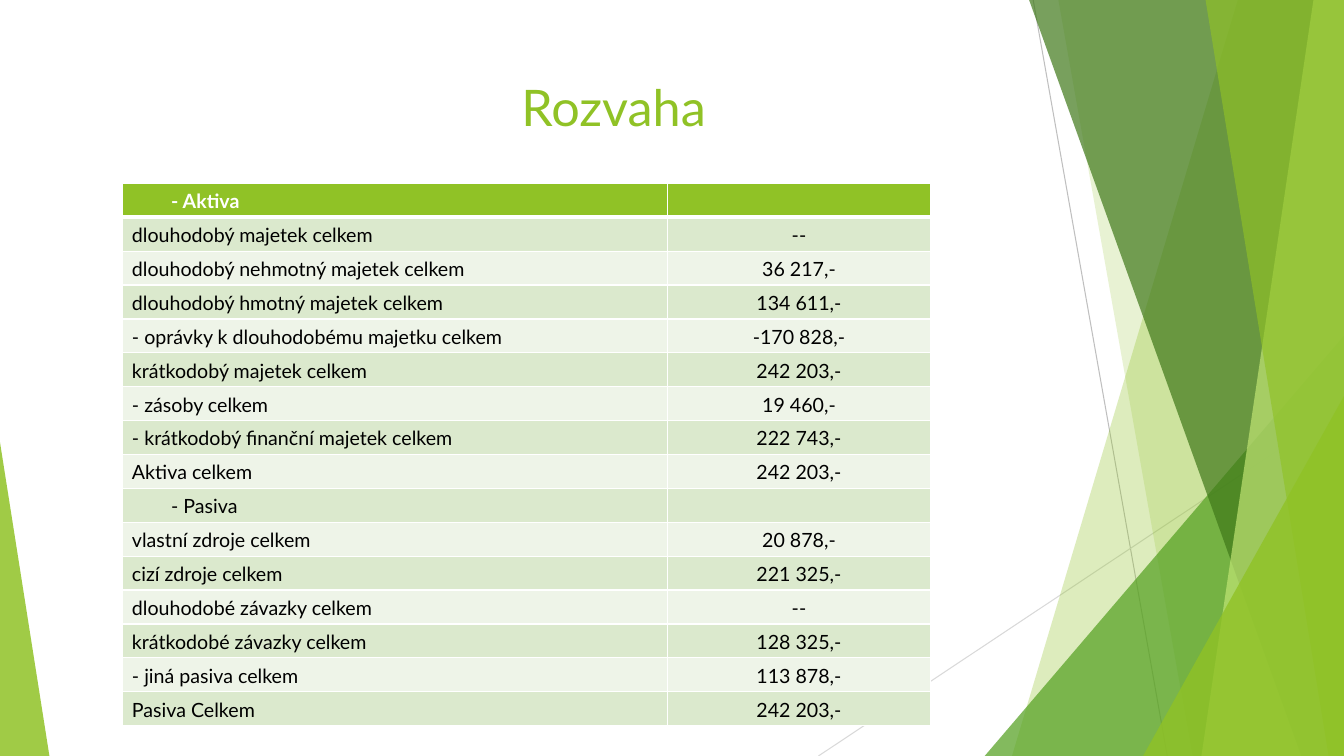
from lxml import etree
from pptx import Presentation
from pptx.dml.color import RGBColor
from pptx.enum.shapes import MSO_CONNECTOR, MSO_SHAPE
from pptx.enum.text import MSO_ANCHOR, MSO_AUTO_SIZE, PP_ALIGN
from pptx.oxml.ns import qn
from pptx.util import Pt

LINE = MSO_CONNECTOR.STRAIGHT
WEDGE = MSO_SHAPE.ISOSCELES_TRIANGLE
TOP, MIDDLE = MSO_ANCHOR.TOP, MSO_ANCHOR.MIDDLE
NO_FIT = MSO_AUTO_SIZE.NONE
LEFT, CENTER = PP_ALIGN.LEFT, PP_ALIGN.CENTER
FONT = "Lato"
LIME = "90C226"
WHITE = "FFFFFF"
BANDS = ("EEF4E8", "DBE9CD")
HEADS = ("- Aktiva", "- Pasiva")

ROWS = [
    ("- Aktiva", ""),
    ("dlouhodobý majetek celkem", "--"),
    ("dlouhodobý nehmotný majetek celkem", "36 217,-"),
    ("dlouhodobý hmotný majetek celkem", "134 611,-"),
    ("- oprávky k dlouhodobému majetku celkem", "-170 828,-"),
    ("krátkodobý majetek celkem", "242 203,-"),
    ("- zásoby celkem", "19 460,-"),
    ("- krátkodobý finanční majetek celkem", "222 743,-"),
    ("Aktiva celkem", "242 203,-"),
    ("- Pasiva", ""),
    ("vlastní zdroje celkem", "20 878,-"),
    ("cizí zdroje celkem", "221 325,-"),
    ("dlouhodobé závazky celkem", "--"),
    ("krátkodobé závazky celkem", "128 325,-"),
    ("- jiná pasiva celkem", "113 878,-"),
    ("Pasiva Celkem", "242 203,-"),
]


def tint(code):
    """Turn a hex string into a colour."""
    return RGBColor.from_string(code)


def paint(shape, code, alpha):
    """Fill a shape with a see-through colour and no outline."""
    shape.shadow.inherit = False
    shape.line.fill.background()
    shape.fill.solid()
    shape.fill.fore_color.rgb = tint(code)
    color = shape._element.spPr.find(qn("a:solidFill"))[0]
    etree.SubElement(color, qn("a:alpha"), val=str(alpha * 1000))


def wedge(slide, left, top, width, height, lean, code, alpha):
    """Draw a right-angled triangle whose peak leans to one side."""
    shape = slide.shapes.add_shape(WEDGE, Pt(left), Pt(top), Pt(width), Pt(height))
    shape.adjustments[0] = lean
    paint(shape, code, alpha)


def pane(slide, left, top, width, height, head, foot, code, alpha):
    """Draw a pane with a slanted left edge, flush with the box on the right."""
    right, base = left + width, top + height
    path = slide.shapes.build_freeform(Pt(left + head), Pt(top), scale=1.0)
    spots = [(right, top), (right, base), (left + foot, base)]
    path.add_line_segments([(Pt(x), Pt(y)) for x, y in spots], close=True)
    paint(path.convert_to_shape(), code, alpha)


def rule(slide, start, end, code):
    """Draw a thin line between two points."""
    line = slide.shapes.add_connector(LINE, *map(Pt, start + end))
    line.line.color.rgb = tint(code)
    line.line.width = Pt(0.75)
    etree.SubElement(line._element.spPr, qn("a:effectLst"))


def decor(slide, left, top, width, height):
    """Lay the green panes and thin lines along the right side."""
    box = (left, top, width, height)
    right, base = left + width, top + height

    def spike(wide, tall, code, alpha):
        """Place a triangle in the lower right corner."""
        wedge(slide, right - wide, base - tall, wide, tall, 1, code, alpha)

    rule(slide, (left + 158, top), (left + 253.8, base), "BFBFBF")
    rule(slide, (right, top + 290.2), (left + 4.6, base), "D9D9D9")
    pane(slide, *box, 304.2, 142.9, LIME, 30)
    pane(slide, *box, 176, 271.8, LIME, 20)
    spike(256.6, 300.2, "54A021", 72)
    pane(slide, *box, 155.1, 349.5, "3F7819", 70)
    pane(slide, *box, 358.2, 278.2, "C0E474", 70)
    pane(slide, *box, 281.1, 369, LIME, 65)
    spike(143.5, 257, LIME, 80)


def title(slide, left, top, width, height):
    """Set the slide title."""
    shape = slide.shapes.title
    shape.left, shape.top, shape.width, shape.height = map(Pt, (left, top, width, height))
    frame = shape.text_frame
    frame.text = "Rozvaha"
    frame.auto_size = NO_FIT
    frame.vertical_anchor = TOP
    para = frame.paragraphs[0]
    para.alignment = CENTER
    font = para.runs[0].font
    font.name, font.size, font.color.rgb = FONT, Pt(36), tint(LIME)


def border(cell, base):
    """Give a cell white borders, with its own width at the base."""
    props = cell._tc.get_or_add_tcPr()
    for side, wide in (("L", 1), ("R", 1), ("T", 1), ("B", base)):
        edge = etree.SubElement(props, qn("a:ln" + side), w=str(Pt(wide)))
        fill = etree.SubElement(edge, qn("a:solidFill"))
        etree.SubElement(fill, qn("a:srgbClr"), val=WHITE)


def write(cell, text, align, first):
    """Put text in a table cell and format it."""
    cell.margin_left = Pt(34.5 if text in HEADS else 6.5)
    cell.margin_right = Pt(6.5)
    cell.margin_top = cell.margin_bottom = Pt(2.9)
    cell.vertical_anchor = MIDDLE
    cell.text_frame.text = text
    para = cell.text_frame.paragraphs[0]
    para.alignment = align
    para.line_spacing = 1.07
    para.space_after = Pt(8)
    for run in para.runs:
        font = run.font
        font.name, font.size, font.bold = FONT, Pt(14), first
        font.color.rgb = tint(WHITE if first else "000000")
    etree.SubElement(para._p, qn("a:endParaRPr"), sz="1400")


def sheet(slide, left, top, width, height):
    """Build the balance table."""
    box = map(Pt, (left, top, width, height))
    table = slide.shapes.add_table(len(ROWS), 2, *box).table
    for col, share in zip(table.columns, (0.675, 0.325)):
        col.width = Pt(width * share)
    for i, row in enumerate(ROWS):
        table.rows[i].height = Pt(height / len(ROWS))
        first = i == 0
        for j, (text, align) in enumerate(zip(row, (LEFT, CENTER))):
            cell = table.cell(i, j)
            border(cell, 3 if first else 1)
            cell.fill.solid()
            cell.fill.fore_color.rgb = tint(LIME if first else BANDS[i % 2])
            write(cell, text, align, first)


def main():
    """Build and save the slide."""
    deck = Presentation()
    deck.slide_width, deck.slide_height = Pt(960), Pt(540)
    slide = deck.slides.add_slide(deck.slide_layouts[5])
    decor(slide, 580, 0, 380, 540)
    wedge(slide, 0, 316, 35.3, 224, 0, LIME, 85)
    title(slide, 92, 50.4, 692.6, 102)
    sheet(slide, 87.8, 131, 576.7, 387.4)
    deck.save("out.pptx")


if __name__ == "__main__":
    main()
